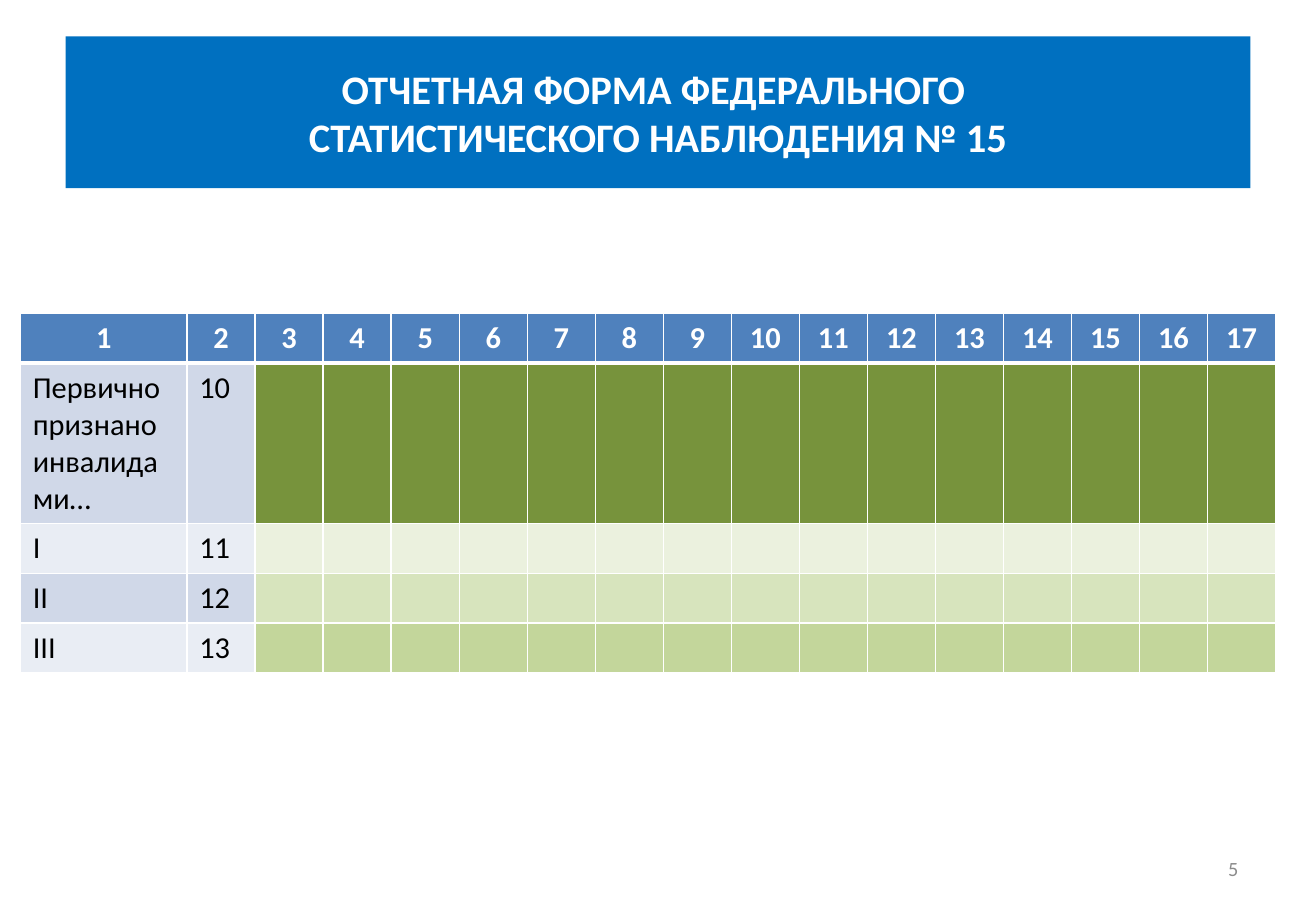
import pptx
import pptx.dml.color
import pptx.enum.shapes
import pptx.enum.text
import pptx.oxml
import pptx.oxml.ns
import pptx.util

Inches = pptx.util.Inches
ALIGN = pptx.enum.text.PP_ALIGN
ANCHOR = pptx.enum.text.MSO_ANCHOR


def color(hex_code):
    return pptx.dml.color.RGBColor.from_string(hex_code)


class FormSlide:
    font_name = "Calibri"
    border = "FFFFFF"

    def __init__(self, presentation):
        self.slide = presentation.slides.add_slide(presentation.slide_layouts[6])

    def set_text(self, frame, text, size, ink, bold=False, align=ALIGN.LEFT):
        frame.word_wrap = True
        frame.text = text
        for paragraph in frame.paragraphs:
            paragraph.alignment = align
            font = paragraph.font
            font.name, font.size, font.bold = self.font_name, pptx.util.Pt(size), bold
            font.color.rgb = color(ink)

    def banner(self, box, text, fill):
        shape = self.slide.shapes.add_shape(
            pptx.enum.shapes.MSO_SHAPE.RECTANGLE, *map(Inches, box))
        shape.shadow.inherit = False
        shape.fill.solid()
        shape.fill.fore_color.rgb = color(fill)
        shape.line.fill.background()
        shape.text_frame.vertical_anchor = ANCHOR.MIDDLE
        self.set_text(shape.text_frame, text, 24, "FFFFFF", True, ALIGN.CENTER)

    def page_number(self, box, text):
        frame = self.slide.shapes.add_textbox(*map(Inches, box)).text_frame
        frame.vertical_anchor = ANCHOR.MIDDLE
        self.set_text(frame, text, 12, "8C8C8C", align=ALIGN.RIGHT)

    def table(self, left, top, widths, heights):
        table = self.slide.shapes.add_table(
            len(heights), len(widths), Inches(left), Inches(top),
            Inches(sum(widths)), Inches(sum(heights))).table
        for column, width in zip(table.columns, widths):
            column.width = Inches(width)
        for row, height in zip(table.rows, heights):
            row.height = Inches(height)
        return table

    def cell(self, cell, text, fill, top=1, bottom=1, header=False):
        cell.fill.solid()
        cell.fill.fore_color.rgb = color(fill)
        if header:
            cell.vertical_anchor = ANCHOR.MIDDLE
            self.set_text(cell.text_frame, text, 18, "FFFFFF", True, ALIGN.CENTER)
        else:
            self.set_text(cell.text_frame, text, 18, "000000")
        # Border lines come before the fill in the cell properties
        namespace = pptx.oxml.ns.nsdecls("a")
        sides = {"lnL": 1, "lnR": 1, "lnT": top, "lnB": bottom}
        for place, (side, points) in enumerate(sides.items()):
            line = pptx.oxml.parse_xml(
                f'<a:{side} {namespace} w="{pptx.util.Pt(points)}"><a:solidFill>'
                f'<a:srgbClr val="{self.border}"/></a:solidFill></a:{side}>')
            cell._tc.get_or_add_tcPr().insert(place, line)


def main():
    presentation = pptx.Presentation()
    presentation.slide_width = Inches(10.83)
    presentation.slide_height = Inches(7.5)
    form = FormSlide(presentation)

    # Disability table: label, line number, then 15 empty columns
    column_count = 17
    groups = [
        ("Первично признано инвалидами…", "D0D8E8", "77933C"),
        ("I", "E9EDF4", "EBF1DE"),
        ("II", "D0D8E8", "D7E4BD"),
        ("III", "E9EDF4", "C3D69B"),
    ]
    table = form.table(0.17, 2.58, [1.37] + [0.56] * (column_count - 1),
                       [0.41, 1.28, 0.41, 0.41, 0.41])
    for column in range(column_count):
        form.cell(table.cell(0, column), str(column + 1), "4F81BD",
                  bottom=3, header=True)
    for row, (label, label_fill, data_fill) in enumerate(groups, start=1):
        texts = [label, str(row + 9)] + [""] * (column_count - 2)
        for column, text in enumerate(texts):
            form.cell(table.cell(row, column), text,
                      label_fill if column < 2 else data_fill,
                      top=3 if row == 1 else 1)

    # Page number and title
    form.page_number((7.76, 6.95, 2.53, 0.4), "5")
    form.banner((0.54, 0.3, 9.75, 1.25),
                "ОТЧЕТНАЯ ФОРМА ФЕДЕРАЛЬНОГО \vСТАТИСТИЧЕСКОГО НАБЛЮДЕНИЯ № 15",
                "0070C0")

    presentation.save("out.pptx")


if __name__ == "__main__":
    main()
